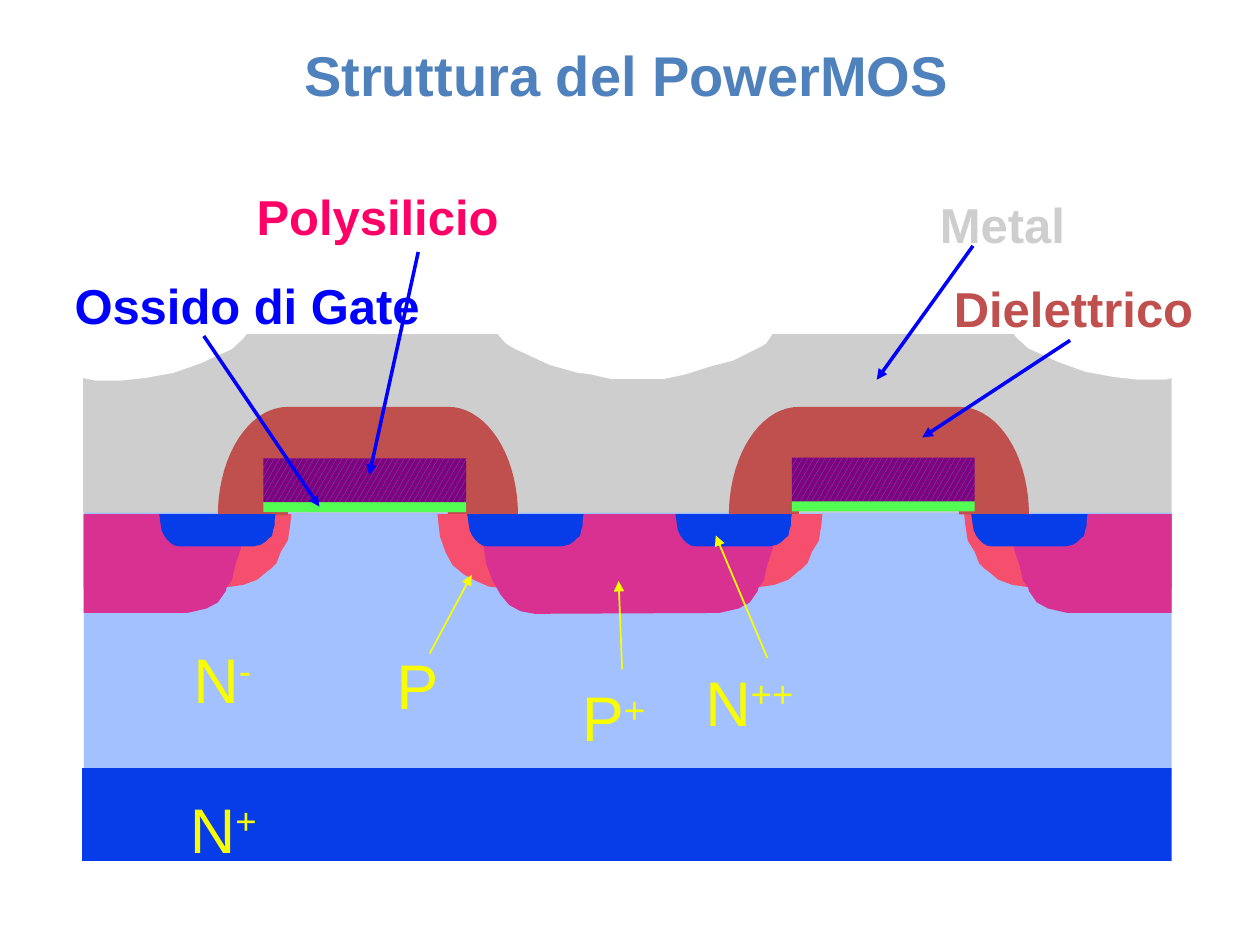
import math

from lxml import etree
from pptx import Presentation
from pptx import util as u
from pptx.dml.color import RGBColor
from pptx.enum import dml, shapes, text
from pptx.oxml import ns

WHITE = RGBColor(0xFF, 0xFF, 0xFF)
TITLE_BLUE = RGBColor(0x4F, 0x81, 0xBD)
EPI_BLUE = RGBColor(0xA2, 0xC1, 0xFE)
METAL_GREY = RGBColor(0xCE, 0xCE, 0xCE)
P_RED = RGBColor(0xF6, 0x4F, 0x6D)
P_PLUS = RGBColor(0xD9, 0x31, 0x92)
DIELECTRIC = RGBColor(0xC0, 0x50, 0x4D)
N_BLUE = RGBColor(0x06, 0x3D, 0xE8)
OXIDE_GREEN = RGBColor(0x52, 0xFF, 0x52)
POLY_PURPLE = RGBColor(0x80, 0x00, 0x80)
POLY_PINK = RGBColor(0xFF, 0x00, 0x66)
YELLOW = RGBColor(0xFA, 0xFD, 0x00)
ARROW_BLUE = RGBColor(0x00, 0x00, 0xFF)

SURFACE = 293.75
LEFT, RIGHT = 47.75, 669.5

# Junction profiles: offsets from the corner at the silicon surface
P_IN = [(0, 0), (0.7, 6.5), (1.5, 13), (4.5, 21.5), (8.5, 29), (15, 34.5),
        (21.5, 38), (29.5, 41.5), (39.5, 42.5)]
P_OUT = [(-42, 42.5), (-27.5, 40.5), (-19.5, 37.5), (-13.5, 32.5), (-12, 31.5),
         (-8.5, 28), (-6, 21.5), (-2, 15), (-0.7, 6.5), (0, 0)]
PP_IN = [(0, 0), (0.7, 8.5), (1.5, 16.5), (3.5, 29), (7, 38), (11.5, 46),
         (16.5, 52), (23, 55.5), (31, 57)]
PP_OUT = [(-32, 56.5), (-21, 54), (-14.5, 50.5), (-10, 44), (-9.5, 42),
          (-6.5, 38), (-4.5, 29), (-1.5, 20), (0, 8.5), (0, 0)]
SOURCE = [(0, 0), (0.5, 3), (0.7, 5), (1.5, 9.5), (3, 12.5), (4.5, 14.5),
          (6.5, 16.5), (9, 18), (12, 18.5), (54, 18.5), (58, 17.5), (60.5, 16),
          (62.5, 14), (64.5, 12.5), (65, 9.5), (66, 6.5), (66, 3), (66.5, 0)]

# Hollows in the top of the metal
SIDE_HOLLOW = [(47.5, 216), (54.5, 217.5), (69, 217.5), (83, 216), (99.5, 213),
               (115, 207.5), (132.5, 199.5), (139, 193.5), (141, 191),
               (141, 186.5), (46, 188)]
MID_HOLLOW = [(284.5, 191), (288, 195), (289.5, 196.5), (294.5, 199.5), (299, 201.5),
              (306.5, 205), (314, 208.5), (330, 213), (338, 214), (349, 216.5),
              (379.5, 216.5), (391.5, 214), (405.5, 209.5), (419, 206), (435, 198),
              (438, 196), (442, 190), (441.5, 179), (285, 180.5)]


def shift(points, dx, dy=SURFACE):
    return [(x + dx, y + dy) for x, y in points]


def mirror(points):
    return [(-x, y) for x, y in points]


class Painter:
    font = "Arial"

    def __init__(self, slide):
        self.s = slide

    def plain(self, sp, color):
        sp.shadow.inherit = False
        sp.line.fill.background()
        sp.fill.solid()
        sp.fill.fore_color.rgb = color
        return sp

    def rect(self, x, y, w, h, color):
        sp = self.s.shapes.add_shape(shapes.MSO_SHAPE.RECTANGLE,
                                     u.Pt(x), u.Pt(y), u.Pt(w), u.Pt(h))
        return self.plain(sp, color)

    def hatched(self, x, y, w, h, fore, back):
        sp = self.rect(x, y, w, h, back)
        sp.fill.patterned()
        sp.fill.pattern = dml.MSO_PATTERN.LARGE_CONFETTI
        sp.fill.fore_color.rgb = fore
        sp.fill.back_color.rgb = back

    def outline(self, points, color):
        emu = [(u.Pt(x), u.Pt(y)) for x, y in points]
        fb = self.s.shapes.build_freeform(*emu[0])
        fb.add_line_segments(emu[1:], close=True)
        return self.plain(fb.convert_to_shape(), color)

    def quarter(self, cx, top, rx, ry, color):
        """Quarter ellipse; a negative rx opens it to the left."""
        base = top + ry
        angles = [math.radians(a) for a in range(0, 91, 5)]
        arc = [(cx + rx * math.sin(a), base - ry * math.cos(a)) for a in angles]
        self.outline([(cx, base)] + arc, color)

    def arrow(self, start, end, color, width):
        c = self.s.shapes.add_connector(shapes.MSO_CONNECTOR.STRAIGHT,
                                        *(u.Pt(v) for v in start + end))
        c.line.color.rgb = color
        c.line.width = u.Pt(width)
        etree.SubElement(c.line._get_or_add_ln(), ns.qn("a:tailEnd"), type="triangle")
        etree.SubElement(c._element.spPr, ns.qn("a:effectLst"))

    def label(self, x, y, w, h, words, size, color, bold=False, sup="",
              inset=(7.2, 3.6), wrap=False, align=text.PP_ALIGN.LEFT):
        tf = self.s.shapes.add_textbox(u.Pt(x), u.Pt(y), u.Pt(w), u.Pt(h)).text_frame
        tf.margin_left = tf.margin_right = u.Pt(inset[0])
        tf.margin_top = tf.margin_bottom = u.Pt(inset[1])
        tf.word_wrap = wrap
        tf.auto_size = text.MSO_AUTO_SIZE.SHAPE_TO_FIT_TEXT
        p = tf.paragraphs[0]
        p.text = words
        p.alignment = align
        if sup:
            r = p.add_run()
            r.text = sup
            r.font._element.set("baseline", "30000")
        for r in p.runs:
            r.font.name = self.font
            r.font.size = u.Pt(size)
            r.font.bold = bold
            r.font.color.rgb = color


def main():
    prs = Presentation()
    prs.slide_width, prs.slide_height = u.Pt(720), u.Pt(540)
    d = Painter(prs.slides.add_slide(prs.slide_layouts[6]))

    d.label(136, 19.5, 444, 46, "Struttura del PowerMOS", 32, TITLE_BLUE, bold=True,
            wrap=True, align=text.PP_ALIGN.CENTER)

    # Epitaxial layer, metal and substrate
    d.rect(48, 292.5, 621.5, 147, EPI_BLUE)
    d.rect(47.5, 191, 622, 102, METAL_GREY)
    d.rect(47, 439, 622.5, 53, N_BLUE)

    # Outer P and P+ wells
    for color, profile, left_x, right_x in ((P_RED, P_OUT, 166.5, 551),
                                            (P_PLUS, PP_OUT, 139, 578)):
        depth = profile[0][1]
        for edge, side, corner in ((LEFT, profile, left_x),
                                   (RIGHT, mirror(profile), right_x)):
            d.outline([(edge, SURFACE), (edge, SURFACE + depth)] + shift(side, corner),
                      color)

    # Dielectric domes
    for cap_left, cap_right in ((164.5, 256), (456.5, 548)):
        d.quarter(cap_left, 232.5, -40, 62, DIELECTRIC)
        d.quarter(cap_right, 232.5, 40, 61.5, DIELECTRIC)
        d.rect(cap_left, 232.5, cap_right - cap_left, 33.5, DIELECTRIC)

    # Gate oxide and polysilicon
    for x, y, w in ((150.5, 262, 116), (452.5, 261.5, 104.5)):
        d.rect(x, y + 24.5, w, 6.25, OXIDE_GREEN)
        d.hatched(x, y, w, 25, TITLE_BLUE, POLY_PURPLE)

    # Central wells and N++ sources
    d.outline(shift(P_IN, 250) + shift(P_OUT, 470), P_RED)
    d.outline(shift(PP_IN, 274.5) + shift(PP_OUT, 443), P_PLUS)
    for x in (91, 267, 386, 555):
        d.outline(shift(SOURCE, x), N_BLUE)

    # Hollows in the metal
    d.outline(SIDE_HOLLOW, WHITE)
    d.outline(MID_HOLLOW, WHITE)
    d.outline(shift(mirror(SIDE_HOLLOW), 720, -0.5), WHITE)

    # Arrows
    for start, end in (((438.5, 376), (409, 306)), ((355.5, 382.5), (353.5, 332)),
                       ((245.5, 373.5), (269.5, 328.5))):
        d.arrow(start, end, YELLOW, 1)
    for start, end in (((611.5, 194.5), (527, 250)), ((556, 140.5), (501, 217)),
                       ((239, 144), (211, 271.5)), ((116.5, 192), (182.5, 289.5))):
        d.arrow(start, end, ARROW_BLUE, 2)

    # Doping labels
    for x, y, w, words, sup in ((389.5, 372.5, 81.5, "N", "++"), (213, 363, 60, "P", ""),
                                (319, 381.5, 65, "P", "+"), (97, 359.5, 60.5, "N", "-"),
                                (95, 445, 67, "N", "+")):
        d.label(x, y, w, 57, words, 36, YELLOW, sup=sup, inset=(13.5, 6.5))

    # Layer labels
    for x, y, w, words, color in ((530, 107.5, 86.5, "Metal", METAL_GREY),
                                  (538, 155.5, 152.5, "Dielettrico", DIELECTRIC),
                                  (139.5, 103, 154, "Polysilicio", POLY_PINK),
                                  (35.5, 154, 214, "Ossido di Gate", ARROW_BLUE)):
        d.label(x, y, w, 41, words, 28, color, bold=True)

    prs.save("out.pptx")


if __name__ == "__main__":
    main()
